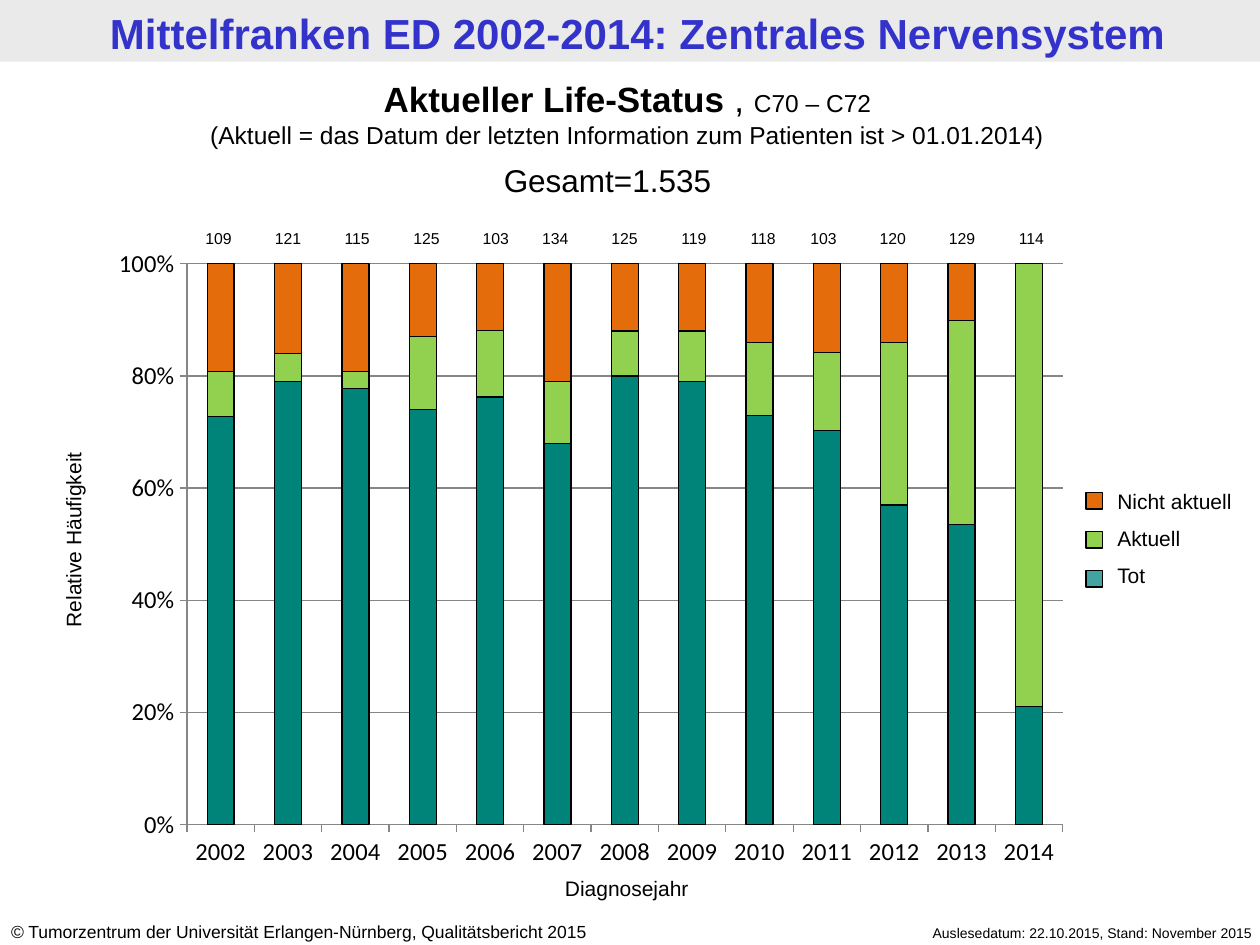
from lxml.etree import SubElement
from pptx import Presentation
from pptx.chart.data import CategoryChartData
from pptx.dml.color import RGBColor
from pptx.enum.chart import XL_CHART_TYPE, XL_TICK_MARK
from pptx.enum.shapes import MSO_SHAPE
from pptx.enum.text import PP_ALIGN
from pptx.oxml import parse_xml
from pptx.oxml.ns import nsdecls, qn
from pptx.util import Pt

TITLE = "Mittelfranken ED 2002-2014: Zentrales Nervensystem"
HEAD = [
    [("Aktueller Life-Status ", 20, True), (", ", 20, False), ("C70 – C72", 14, False)],
    [("(Aktuell = das Datum der letzten Information zum Patienten ist > 01.01.2014)",
      14, False)],
]
SOURCE = "© Tumorzentrum der Universität Erlangen-Nürnberg, Qualitätsbericht 2015"
DATES = "Auslesedatum: 22.10.2015, Stand: November 2015"
YEARS = [str(year) for year in range(2002, 2015)]
SERIES = [
    ("Tot", "008378", [72, 79, 77, 74, 77, 68, 80, 79, 73, 71, 57, 53, 21]),
    ("Aktuell", "92D050", [8, 5, 3, 13, 12, 11, 8, 9, 13, 14, 29, 36, 79]),
    ("Nicht aktuell", "E46C0A", [19, 16, 19, 13, 12, 21, 12, 12, 14, 16, 14, 10, 0]),
]
# Left edge of each run of case counts, then the counts
COUNTS = [
    (105.1, [109, 121, 115, 125, 103]),
    (297.5, [134, 125, 119, 118]),
    (450.7, [103, 120, 129, 114]),
]
KEYS = [("E46C0A", 100), ("92D050", 100), ("008380", 74)]
PLOT = {"x": 0.089, "y": 0.044, "w": 0.891, "h": 0.871}
PITCH = 39.6
LEFT, MID, RIGHT = PP_ALIGN.LEFT, PP_ALIGN.CENTER, PP_ALIGN.RIGHT


def paint(color, code):
    color.rgb = RGBColor.from_string(code)


def edge(line, code="000000"):
    paint(line.color, code)
    line.width = Pt(0.75)


def write(slide, box, paras, align=LEFT, color="000000", gap=0):
    """Add a text box; each paragraph is a list of (text, size, bold)."""
    shape = slide.shapes.add_textbox(*map(Pt, box))
    frame = shape.text_frame
    frame.word_wrap = True
    for i, parts in enumerate(paras):
        para = frame.add_paragraph() if i else frame.paragraphs[0]
        para.alignment = align
        if i and gap:
            para.space_before = Pt(gap)
        for text, size, bold in parts:
            run = para.add_run()
            run.text = text
            run.font.name = "Arial"
            run.font.size = Pt(size)
            run.font.bold = bold
            paint(run.font.color, color)
    return shape


def line(slide, text, size, box, align=MID):
    return write(slide, box, [[(text, size, False)]], align)


def block(slide, box, code):
    shape = slide.shapes.add_shape(MSO_SHAPE.RECTANGLE, *map(Pt, box))
    shape.shadow.inherit = False
    shape.fill.solid()
    paint(shape.fill.fore_color, code)
    shape.line.fill.background()
    return shape


def draw_chart(slide):
    data = CategoryChartData()
    data.categories = YEARS
    for name, _, vals in SERIES:
        data.add_series(name, vals)
    chart = slide.shapes.add_chart(XL_CHART_TYPE.COLUMN_STACKED_100,
                                   Pt(56.9), Pt(134.6), Pt(561.6), Pt(367.9), data).chart
    chart.has_legend = chart.has_title = False
    chart.font.name = "Calibri"
    chart.font.size = Pt(14)
    paint(chart.font.color, "000000")
    plot = chart.plots[0]
    plot.gap_width, plot.overlap, plot.vary_by_categories = 150, 100, False
    for item, (_, code, _) in zip(plot.series, SERIES):
        item.format.fill.solid()
        paint(item.format.fill.fore_color, code)
        edge(item.format.line)
    for axis in (chart.category_axis, chart.value_axis):
        axis.major_tick_mark = XL_TICK_MARK.OUTSIDE
        axis.minor_tick_mark = XL_TICK_MARK.NONE
        edge(axis.format.line, "868686")
    axis = chart.value_axis
    axis.minimum_scale, axis.maximum_scale, axis.major_unit = 0, 1, 0.2
    axis.has_major_gridlines = True
    edge(axis.major_gridlines.format.line, "868686")
    axis.tick_labels.number_format = "0%"
    axis.tick_labels.number_format_is_linked = False
    fix_plot(chart)


def fix_plot(chart):
    """Pin the inner plot area to the fractions in PLOT."""
    area = chart.plots[0]._element.getparent()
    for old in area.findall(qn("c:layout")):
        area.remove(old)
    layout = parse_xml(f"<c:layout {nsdecls('c')}><c:manualLayout/></c:layout>")
    rules = [("layoutTarget", "inner"), ("xMode", "edge"), ("yMode", "edge")]
    for tag, val in rules + list(PLOT.items()):
        SubElement(layout[0], qn(f"c:{tag}")).set("val", str(val))
    area.insert(0, layout)


def draw_key(slide):
    names = [[(name, 12, False)] for name, _, _ in reversed(SERIES)]
    write(slide, (631.4, 275.8, 88.6, 65.5), names, gap=6.6)
    for i, (code, alpha) in enumerate(KEYS):
        mark = block(slide, (620.6, 281.5 + 22.3 * i, 9.4, 9.4), code)
        edge(mark.line)
        if alpha < 100:
            fill = mark.fill._xPr.find(qn("a:solidFill"))
            SubElement(fill[0], qn("a:alpha")).set("val", str(alpha * 1000))


def main():
    deck = Presentation()
    deck.slide_width, deck.slide_height = Pt(720), Pt(540)
    slide = deck.slides.add_slide(deck.slide_layouts[6])
    block(slide, (0, 0, 720, 35.3), "EAEAEA")
    write(slide, (4.3, 0.7, 720, 35.3), [[(TITLE, 24, True)]], MID, "3333CC")
    line(slide, DATES, 8, (478.8, 524.9, 244, 17.3), RIGHT)
    foot = line(slide, SOURCE, 10, (-0.7, 522.7, 377.3, 19.4), LEFT)
    foot.text_frame.paragraphs[0].runs[0].font.italic = False
    draw_chart(slide)
    line(slide, "Relative Häufigkeit", 12, (-44.6, 297.4, 173.5, 22.3)).rotation = 270
    line(slide, "Diagnosejahr", 12, (277.2, 496.8, 162, 22.3))
    for left, counts in COUNTS:
        for i, count in enumerate(counts):
            line(slide, str(count), 9, (left + PITCH * i, 127.3, PITCH, 18))
    draw_key(slide)
    write(slide, (-2.9, 41, 722.9, 48.2), HEAD, MID)
    line(slide, "Gesamt=1.535", 18, (280.8, 88.6, 158.4, 28.8), LEFT)
    deck.save("out.pptx")


if __name__ == "__main__":
    main()
